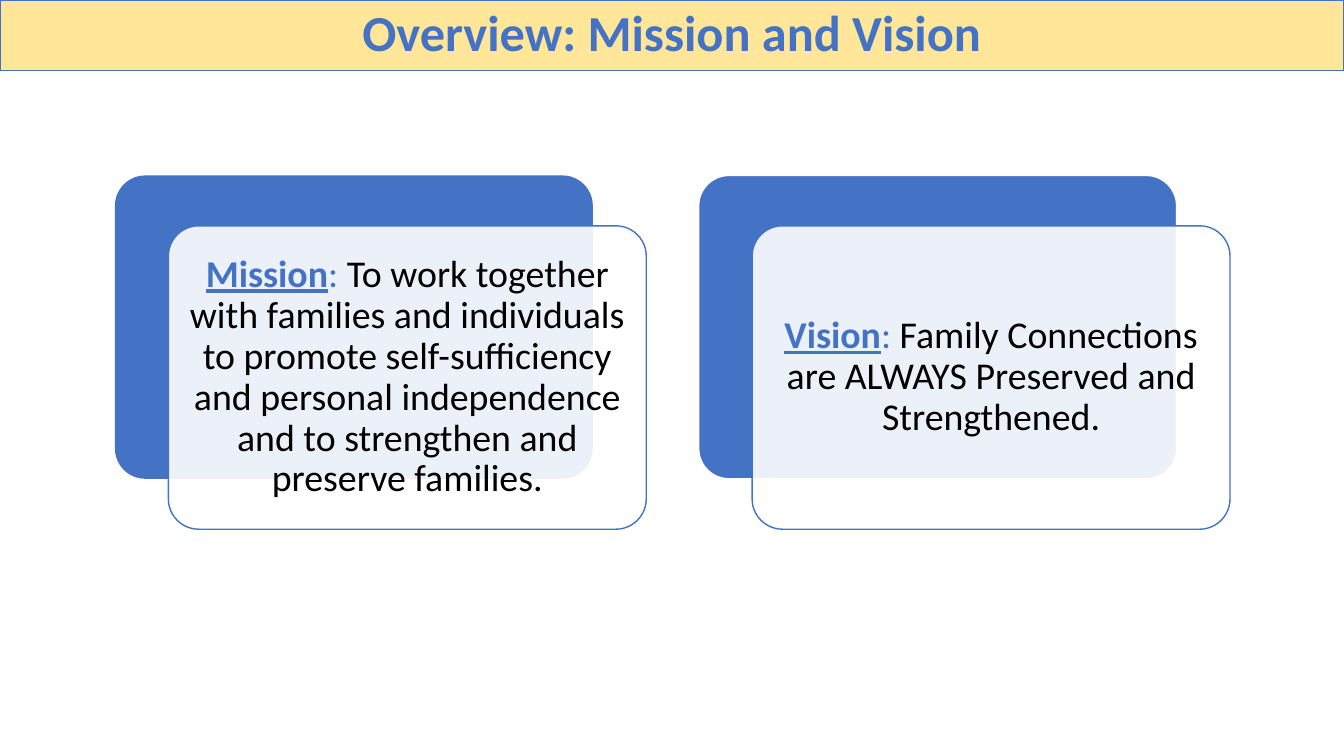
from lxml import etree
from pptx import Presentation
from pptx import util as u
from pptx.dml.color import RGBColor
from pptx.enum import shapes, text
from pptx.oxml import ns


def color(hex_value):
    return RGBColor.from_string(hex_value)


class SlideBuilder:
    font = "Calibri"
    blue = "4472C4"
    cream = "FFE699"
    white = "FFFFFF"
    black = "000000"

    def __init__(self, slide):
        self.slide = slide

    def panel(self, kind, box, fill, line=None, opacity=None):
        panel = self.slide.shapes.add_shape(kind, *map(u.Inches, box))
        panel.shadow.inherit = False
        panel.fill.solid()
        panel.fill.fore_color.rgb = color(fill)
        if opacity:
            tint = panel.fill._xPr.find(".//" + ns.qn("a:srgbClr"))
            etree.SubElement(tint, ns.qn("a:alpha"), val=str(opacity * 1000))
        if line:
            panel.line.color.rgb = color(line)
            panel.line.width = u.Pt(1)
        else:
            panel.line.fill.background()
        return panel

    def rounded(self, box, fill, line=None, opacity=None):
        card = self.panel(shapes.MSO_SHAPE.ROUNDED_RECTANGLE, box, fill, line, opacity)
        card.adjustments[0] = 0.1

    def label(self, box, size, runs, inset=0.11):
        frame = self.slide.shapes.add_textbox(*map(u.Inches, box)).text_frame
        frame.word_wrap = True
        frame.vertical_anchor = text.MSO_ANCHOR.MIDDLE
        frame.margin_left = frame.margin_right = u.Inches(inset)
        frame.margin_top = frame.margin_bottom = u.Inches(inset)
        paragraph = frame.paragraphs[0]
        paragraph.alignment = text.PP_ALIGN.CENTER
        paragraph.line_spacing = 0.9
        for words, ink, bold, underline in runs:
            run = paragraph.add_run()
            run.text = words
            run.font.name = self.font
            run.font.size = u.Pt(size)
            run.font.color.rgb = color(ink)
            run.font.bold = bold
            run.font.underline = underline

    def banner(self, title):
        box = (0, 0, 13.33, 0.7)
        self.panel(shapes.MSO_SHAPE.RECTANGLE, box, self.cream, self.blue)
        self.label(box, 36, [(title, self.blue, True, False)], inset=0.05)

    def statement(self, left, heading, body, back_line):
        top, width, height = 1.74, 4.74, 3.01
        self.rounded((left, top, width, height), self.blue, back_line)
        left, top = left + 0.53, top + 0.5
        self.rounded((left, top, width, height), self.white, self.blue, 90)
        margin = 0.09
        inner = (left + margin, top + margin, width - 2 * margin, height - 2 * margin)
        self.label(inner, 27, [
            (heading, self.blue, True, True),
            (": ", self.blue, False, False),
            (body, self.black, False, False),
        ])


def main():
    deck = Presentation()
    deck.slide_width, deck.slide_height = u.Inches(13.33), u.Inches(7.5)
    builder = SlideBuilder(deck.slides.add_slide(deck.slide_layouts[6]))
    builder.banner("Overview: Mission and Vision")
    statements = [
        ("Mission", "To work together with families and individuals to promote "
         "self-sufficiency and personal independence and to strengthen and "
         "preserve families.", None),
        ("Vision", "Family Connections are ALWAYS Preserved and Strengthened.",
         builder.white),
    ]
    for index, (heading, body, back_line) in enumerate(statements):
        builder.statement(1.14 + index * 5.79, heading, body, back_line)
    deck.save("out.pptx")


if __name__ == "__main__":
    main()
